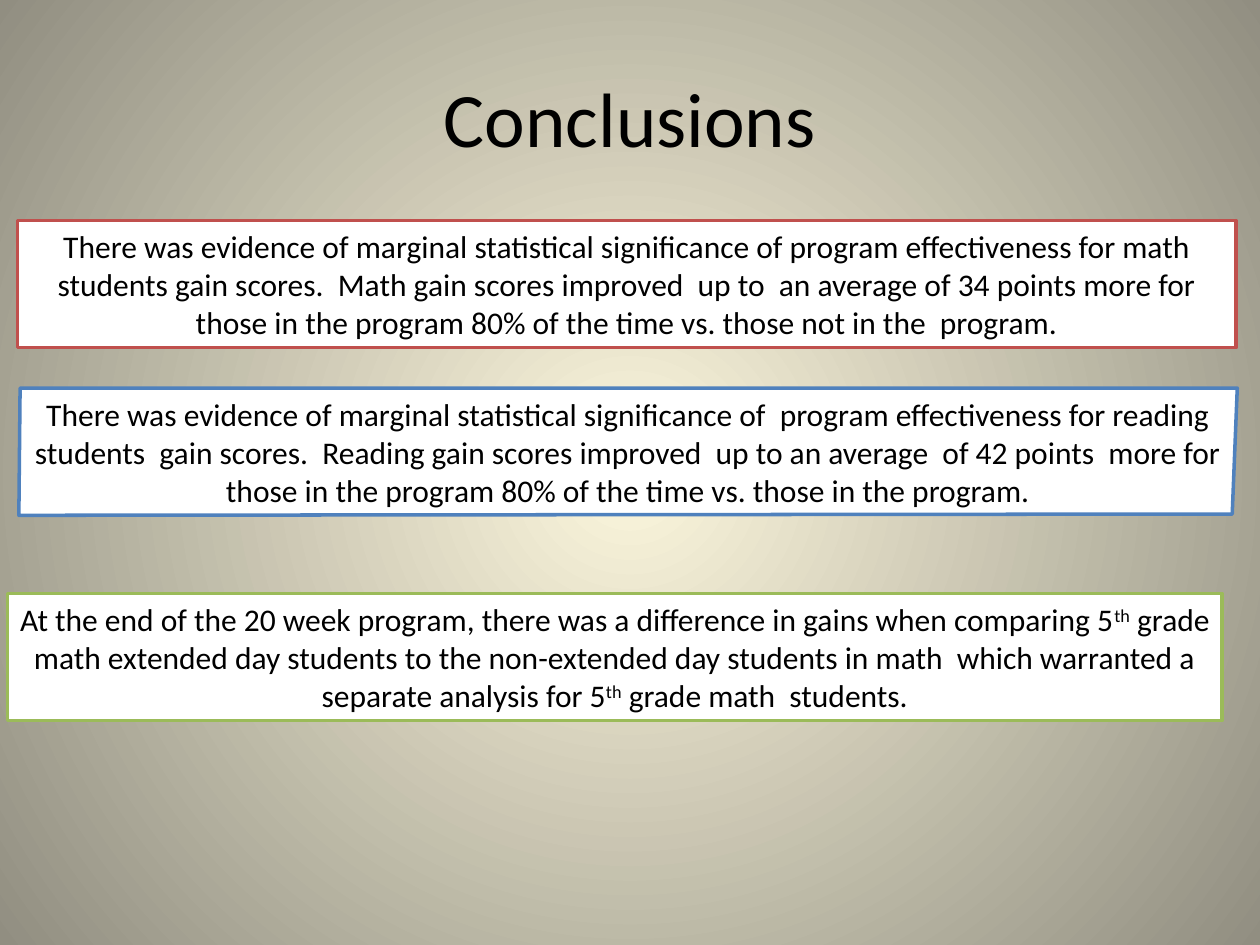
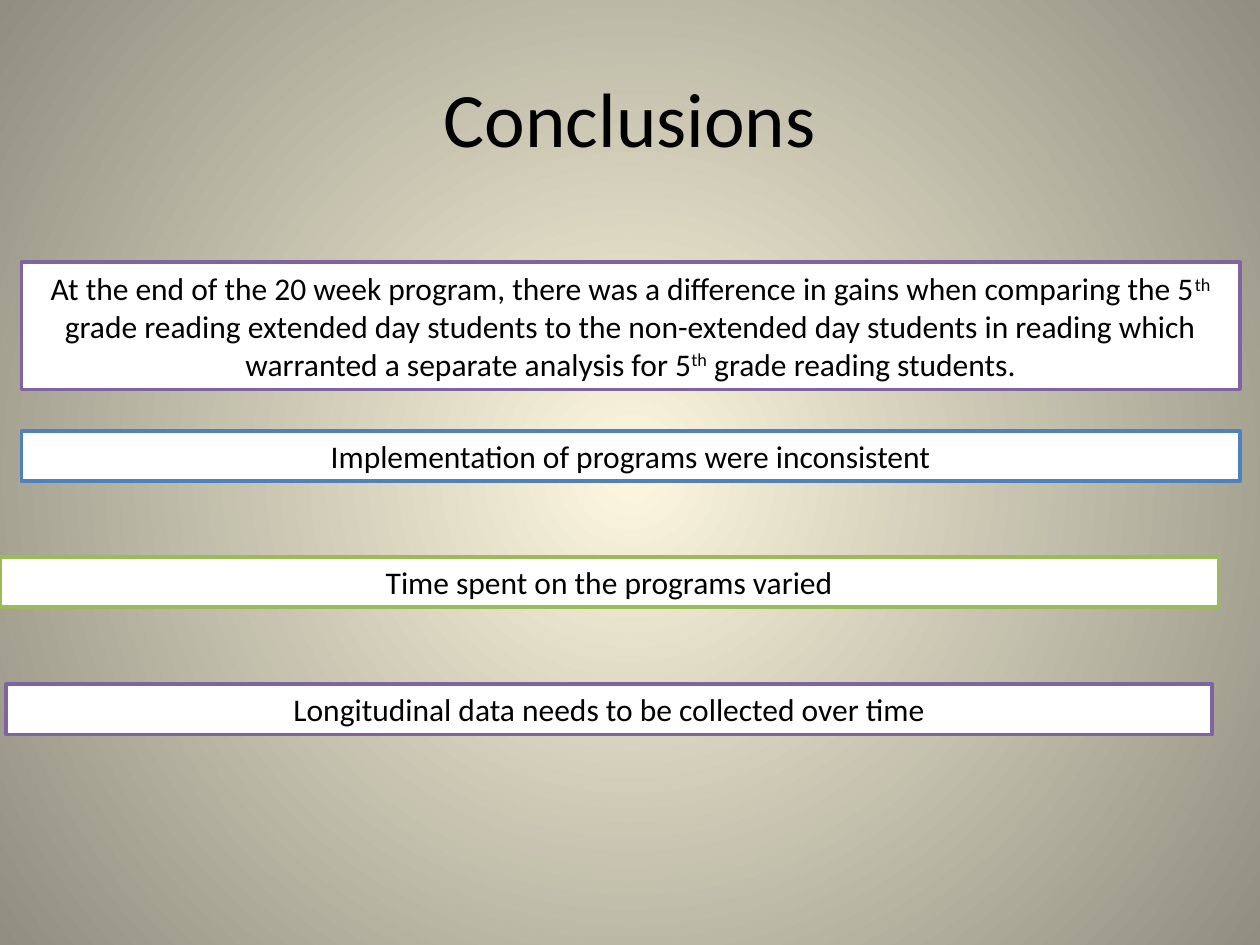
from lxml import etree
from pptx import Presentation
from pptx import util as u
from pptx.dml.color import RGBColor
from pptx.enum import shapes, text
from pptx.oxml.ns import qn

# Content: text between ^ marks is superscript
TITLE = "Conclusions"
COLOURS = {
    "glow": "FCF7DD", "edge": "918E81", "ink": "000000", "paper": "FFFFFF",
    "red": "C0504D", "blue": "4F81BD", "green": "9BBB59", "purple": "8064A2",
}
# Each finding: outline colour, left, top, width, number of lines, text
SLIDES = [
    [
        ("red", 0.14, 1.75, 9.67, 3,
         "There was evidence of marginal statistical significance of program effectiveness "
         "for math students gain scores.  Math gain scores improved  up to  an average of "
         "34 points more for those in the program 80% of the time vs. those not in the  program."),
        ("blue", 0.15, 3.08, 9.67, 3,
         "There was evidence of marginal statistical significance of  program effectiveness "
         "for reading students  gain scores.  Reading gain scores improved  up to an average  "
         "of 42 points  more for those in the program 80% of the time vs. those in the program."),
        ("green", 0.06, 4.71, 9.64, 3,
         "At the end of the 20 week program, there was a difference in gains when comparing "
         "5^th^ grade math extended day students to the non-extended day students in math  "
         "which warranted a separate analysis for 5^th^ grade math  students."),
    ],
    [
        ("purple", 0.17, 2.08, 9.67, 3,
         "At the end of the 20 week program, there was a difference in gains when comparing "
         "the 5^th^ grade reading extended day students to the non-extended day students in "
         "reading which warranted a separate analysis for 5^th^ grade reading students."),
        ("blue", 0.17, 3.42, 9.67, 1, "Implementation of programs were inconsistent"),
        ("green", 0, 4.42, 9.67, 1, "Time spent on the programs varied"),
        ("purple", 0.05, 5.43, 9.57, 1, "Longitudinal data needs to be collected over time"),
    ],
]
BOX_HEIGHTS = {1: 0.4, 3: 1.01}
# Corners of the one hand-drawn box, keyed by slide and finding number
SKEWED = {(0, 1): [(0.16, 3.08), (9.82, 3.08), (9.78, 4.08), (0.15, 4.09)]}


def colour(name):
    return RGBColor.from_string(COLOURS[name])


def paint_background(page):
    """Circular gradient, glowing from the middle of the page."""
    fill = page.background.fill
    fill.gradient()
    for stop, name, position in zip(fill.gradient_stops, ("glow", "edge"), (0, 1)):
        stop.color.rgb = colour(name)
        stop.position = position
    gradient = page._element.find(".//" + qn("a:gradFill"))
    gradient.remove(gradient.find(qn("a:lin")))
    circle = etree.SubElement(gradient, qn("a:path"), {"path": "circle"})
    etree.SubElement(circle, qn("a:fillToRect"), dict.fromkeys("ltrb", "50000"))


def write(box, words, size):
    frame = box.text_frame
    frame.word_wrap = True
    frame.vertical_anchor = text.MSO_ANCHOR.MIDDLE
    para = frame.paragraphs[0]
    para.alignment = text.PP_ALIGN.CENTER
    for number, part in enumerate(words.split("^")):
        span = para.add_run()
        span.text = part
        for name, value in {"name": "Calibri", "size": u.Pt(size)}.items():
            setattr(span.font, name, value)
        span.font.color.rgb = colour("ink")
        if number % 2:
            span.font._element.set("baseline", "30000")


def add_title(page):
    box = page.shapes.add_textbox(*map(u.Inches, (0.5, 0.3, 9, 1.25)))
    write(box, TITLE, 44)


def add_finding(page, finding, corners):
    outline, left, top, width, lines, words = finding
    if corners:
        points = [(u.Inches(x), u.Inches(y)) for x, y in corners]
        builder = page.shapes.build_freeform(*points[0])
        builder.add_line_segments(points[1:], close=True)
        box = builder.convert_to_shape()
    else:
        place = map(u.Inches, (left, top, width, BOX_HEIGHTS[lines]))
        box = page.shapes.add_shape(shapes.MSO_SHAPE.RECTANGLE, *place)
    box.shadow.inherit = False
    box.fill.solid()
    box.fill.fore_color.rgb = colour("paper")
    box.line.color.rgb = colour(outline)
    box.line.width = u.Pt(2)
    write(box, words, 18)


def main():
    deck = Presentation()
    deck.slide_width, deck.slide_height = u.Inches(10), u.Inches(7.5)
    for page_number, findings in enumerate(SLIDES):
        page = deck.slides.add_slide(deck.slide_layouts[6])
        paint_background(page)
        add_title(page)
        for number, finding in enumerate(findings):
            add_finding(page, finding, SKEWED.get((page_number, number)))
    deck.save("out.pptx")


if __name__ == "__main__":
    main()
